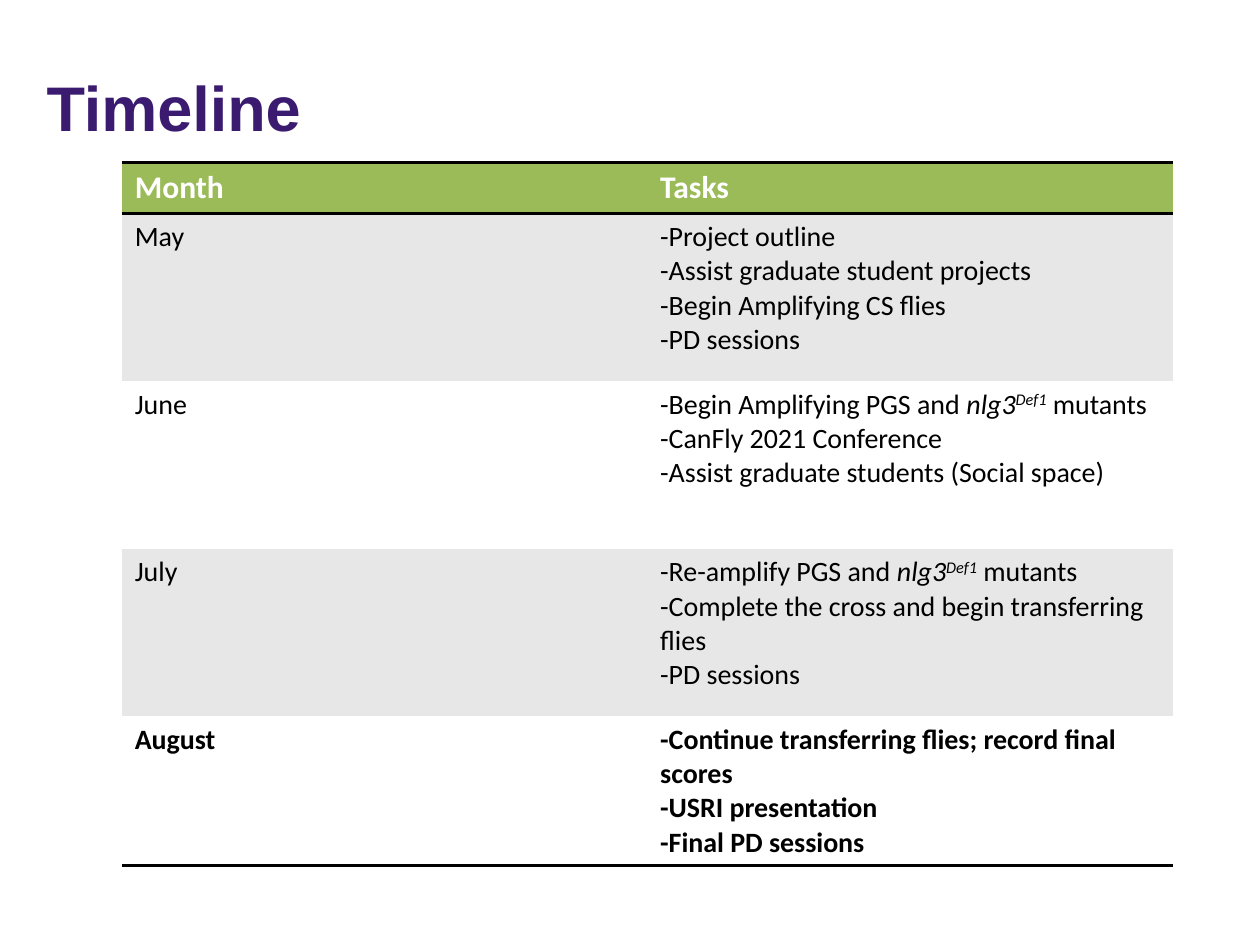
from lxml import etree
from pptx import Presentation
from pptx.dml.color import RGBColor
from pptx.enum import text
from pptx.oxml import ns
from pptx.util import Inches, Pt

TITLE = "Timeline"
HEADER = ("Month", "Tasks")
# A task is a string, or a list of (text, style) runs.
GENE = [("nlg3", "italic"), ("Def1", "super"), (" mutants", "")]
MONTHS = [
    ("May", ["-Project outline", "-Assist graduate student projects",
             "-Begin Amplifying CS flies", "-PD sessions"]),
    ("June", [[("-Begin Amplifying PGS and ", ""), *GENE],
              "-CanFly 2021 Conference",
              "-Assist graduate students (Social space)"]),
    ("July", [[("-Re-amplify PGS and ", ""), *GENE],
              "-Complete the cross and begin transferring flies",
              "-PD sessions"]),
    ("August", ["-Continue transferring flies; record final scores",
                "-USRI presentation", "-Final PD sessions"]),
]
ROW_HEIGHTS = [0.4, 1.33, 1.33, 1.33, 1.16]
COLUMN_WIDTH = 4.17
PURPLE, GREEN, GREY, WHITE, BLACK = "3B1B70", "9BBB59", "E7E7E7", "FFFFFF", "000000"
NO_STYLE = "{2D5ABB26-0587-4C30-8999-92F81FD0307C}"


def rgb(value):
    return RGBColor.from_string(value)


def set_font(font, name, size, color, bold):
    font.name, font.size, font.bold = name, Pt(size), bold
    font.color.rgb = rgb(color)


def add_border(cell, side):
    ln = etree.SubElement(cell._tc.get_or_add_tcPr(), ns.qn("a:" + side), w=str(Pt(2)))
    fill = etree.SubElement(ln, ns.qn("a:solidFill"))
    etree.SubElement(fill, ns.qn("a:srgbClr"), val=BLACK)


def fill_cell(cell, lines, size, color, bold, fill, borders):
    for side in borders:
        add_border(cell, side)
    cell.fill.solid()
    cell.fill.fore_color.rgb = rgb(fill)
    tf = cell.text_frame
    for i, line in enumerate(lines):
        p = tf.add_paragraph() if i else tf.paragraphs[0]
        set_font(p.font, "Calibri", size, color, bold)
        for content, style in [(line, "")] if isinstance(line, str) else line:
            r = p.add_run()
            r.text = content
            set_font(r.font, "Calibri", size, color, bold)
            if style:
                r.font.italic = True
            if style == "super":
                r.font._element.set("baseline", "30000")


def add_title(s):
    title = s.shapes.title
    title.left, title.top, title.width, title.height = map(Inches, (0.27, 0.49, 8.76, 0.7))
    tf = title.text_frame
    tf.text = TITLE
    tf.word_wrap = True
    tf.auto_size = text.MSO_AUTO_SIZE.NONE
    tf.vertical_anchor = text.MSO_ANCHOR.TOP
    p = tf.paragraphs[0]
    p.alignment = text.PP_ALIGN.LEFT
    set_font(p.font, "Arial", 36, PURPLE, True)


def add_timeline(s):
    frame = s.shapes.add_table(
        len(ROW_HEIGHTS), len(HEADER), Inches(0.97), Inches(1.29),
        Inches(COLUMN_WIDTH * len(HEADER)), Inches(sum(ROW_HEIGHTS)))
    table = frame.table
    table._tbl.tblPr.find(ns.qn("a:tableStyleId")).text = NO_STYLE
    for column in table.columns:
        column.width = Inches(COLUMN_WIDTH)
    for row, height in zip(table.rows, ROW_HEIGHTS):
        row.height = Inches(height)

    for c, heading in enumerate(HEADER):
        fill_cell(table.cell(0, c), [heading], 18, WHITE, True, GREEN, ("lnT", "lnB"))
    for r, (month, tasks) in enumerate(MONTHS, start=1):
        last = r == len(MONTHS)
        for c, lines in enumerate(([month], tasks)):
            fill_cell(table.cell(r, c), lines, 16, BLACK, last,
                      GREY if r % 2 else WHITE, ("lnB",) if last else ())


def main():
    prs = Presentation()
    prs.slide_width, prs.slide_height = Inches(10), Inches(7.5)
    s = prs.slides.add_slide(prs.slide_layouts[5])
    add_title(s)
    add_timeline(s)
    prs.save("out.pptx")


if __name__ == "__main__":
    main()
